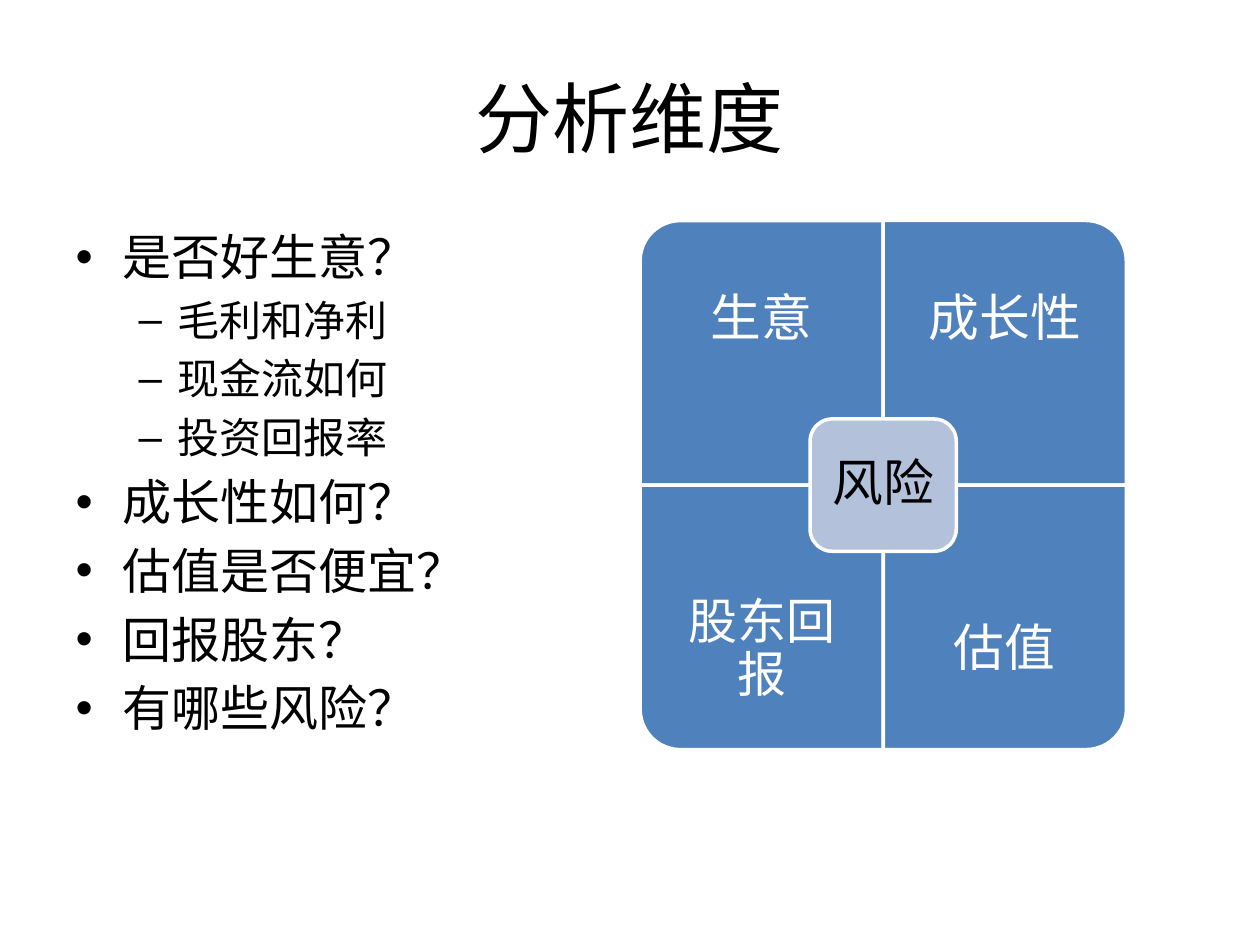
from pptx import Presentation
from pptx.dml.color import RGBColor
from pptx.enum.shapes import MSO_SHAPE
from pptx.enum.text import MSO_ANCHOR, PP_ALIGN
from pptx.util import Inches, Pt

# Content
TITLE = "分析维度"
BULLETS = [
    (0, "是否好生意？"),
    (1, "毛利和净利"),
    (1, "现金流如何"),
    (1, "投资回报率"),
    (0, "成长性如何？"),
    (0, "估值是否便宜？"),
    (0, "回报股东？"),
    (0, "有哪些风险？"),
]
# Label, column, row, rotation that turns the round corner outwards, type size
QUADRANTS = [
    ("生意", 0, 0, 270, 29),
    ("成长性", 1, 0, 0, 29),
    ("股东回报", 0, 1, 180, 28),
    ("估值", 1, 1, 90, 29),
]
CENTRE = "风险"

THEME = {
    "font": "Calibri", "text": "000000", "inverse": "FFFFFF",
    "quadrant": "4F81BD", "centre": "B3C1DB", "line": "FFFFFF",
    "title": 44, "levels": (28, 24), "label": 29,
}

# Matrix geometry, in inches
LEFT, TOP, CELL_W, CELL_H = 5.08, 1.75, 1.93, 2.1
LABEL_H = 1.58
CENTRE_W, CENTRE_H = 1.16, 1.05


def place(shape, x, y, w, h):
    shape.left, shape.top = Inches(x), Inches(y)
    shape.width, shape.height = Inches(w), Inches(h)


def write(p, text, size, color=THEME["text"], align=None, spacing=None):
    if align is not None:
        p.alignment = align
    if spacing is not None:
        p.line_spacing = spacing
    r = p.add_run()
    r.text = text
    r.font.size, r.font.name = Pt(size), THEME["font"]
    r.font.color.rgb = RGBColor.from_string(color)


def write_label(shape, text, inset, **style):
    tf = shape.text_frame
    tf.word_wrap = True
    tf.vertical_anchor = MSO_ANCHOR.MIDDLE
    tf.margin_left = tf.margin_right = Inches(inset)
    tf.margin_top = tf.margin_bottom = Inches(inset)
    write(tf.paragraphs[0], text, align=PP_ALIGN.CENTER, spacing=0.9, **style)


def add_block(shapes, kind, x, y, w, h, fill):
    block = shapes.add_shape(kind, Inches(x), Inches(y), Inches(w), Inches(h))
    block.shadow.inherit = False
    block.fill.solid()
    block.fill.fore_color.rgb = RGBColor.from_string(fill)
    block.line.color.rgb = RGBColor.from_string(THEME["line"])
    block.line.width = Pt(2)
    return block


prs = Presentation()
prs.slide_width, prs.slide_height = Inches(10), Inches(7.5)
s = prs.slides.add_slide(prs.slide_layouts[1])

# Title
title = s.shapes.title
place(title, 0.5, 0.3, 9, 1.25)
title.text_frame.vertical_anchor = MSO_ANCHOR.MIDDLE
write(title.text_frame.paragraphs[0], TITLE, THEME["title"], align=PP_ALIGN.CENTER)

# Questions, with bullets and indents from the template
body = s.placeholders[1]
place(body, 0.5, 1.75, 4.42, 4.95)
tf = body.text_frame
for i, (level, text) in enumerate(BULLETS):
    p = tf.add_paragraph() if i else tf.paragraphs[0]
    p.level = level
    if i == 0:
        p.space_before = Pt(0)
    write(p, text, THEME["levels"][level])

# Matrix quadrants
matrix = s.shapes.add_group_shape().shapes
for text, col, row, rotation, size in QUADRANTS:
    x, y = LEFT + col * CELL_W, TOP + row * CELL_H
    # A quarter turn swaps width and height about the cell's centre
    w, h = (CELL_H, CELL_W) if rotation % 180 else (CELL_W, CELL_H)
    block = add_block(matrix, MSO_SHAPE.ROUND_1_RECTANGLE,
                      x + (CELL_W - w) / 2, y + (CELL_H - h) / 2, w, h,
                      THEME["quadrant"])
    block.rotation = rotation
    # Labels keep to the outer part of the cell, clear of the centre
    label = matrix.add_textbox(Inches(x), Inches(y + row * (CELL_H - LABEL_H)),
                               Inches(CELL_W), Inches(LABEL_H))
    write_label(label, text, 0.22, size=size, color=THEME["inverse"])

# Matrix centre
centre = add_block(matrix, MSO_SHAPE.ROUNDED_RECTANGLE,
                   LEFT + CELL_W - CENTRE_W / 2, TOP + CELL_H - CENTRE_H / 2,
                   CENTRE_W, CENTRE_H, THEME["centre"])
write_label(centre, CENTRE, 0.1, size=THEME["label"])

prs.save("out.pptx")
